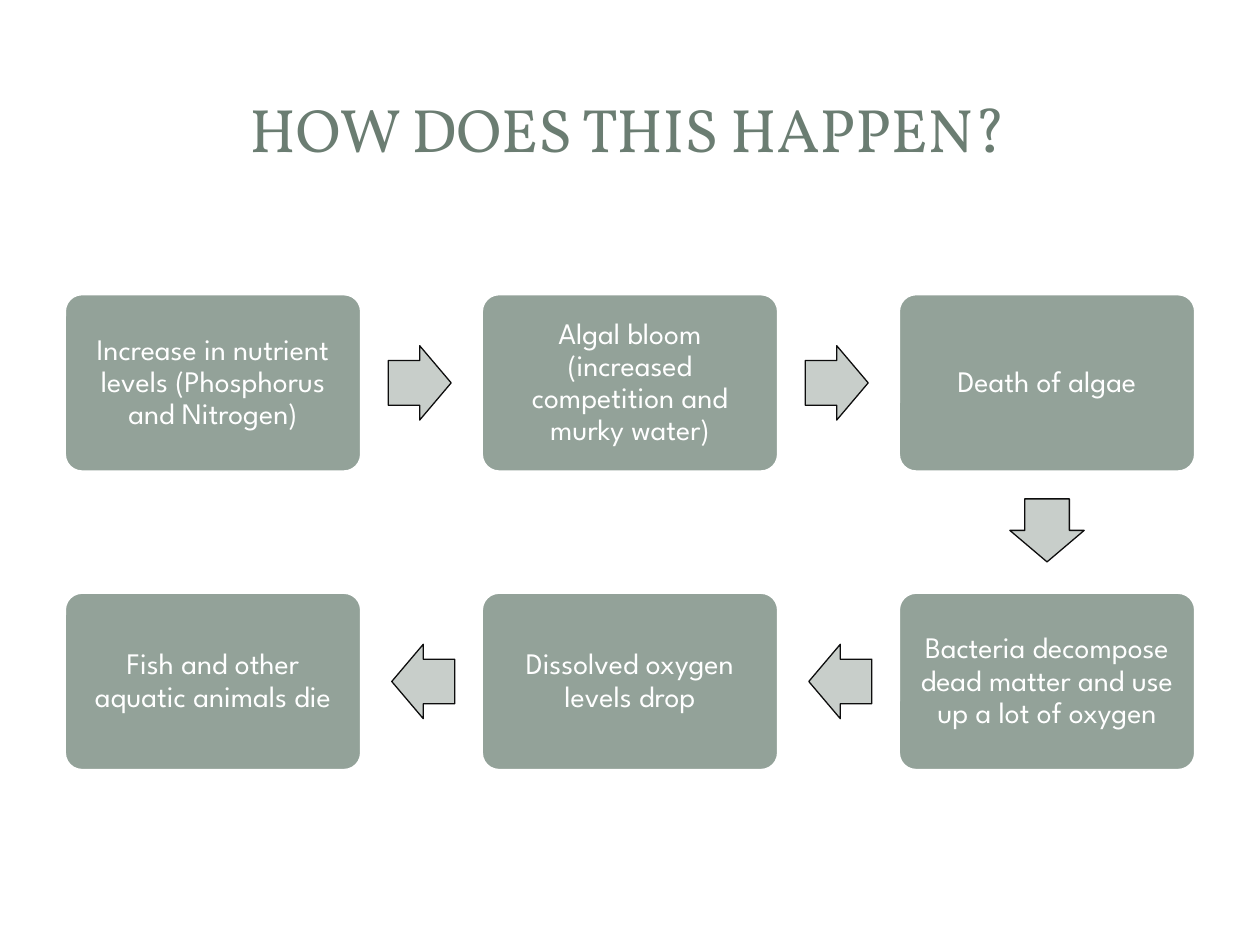
from pptx import Presentation
from pptx import util as u
from pptx.dml.color import RGBColor
from pptx.enum import shapes, text

STEPS = [
    "Increase in nutrient levels (Phosphorus and Nitrogen)",
    "Algal bloom (increased competition and murky water)",
    "Death of algae",
    "Bacteria decompose dead matter and use up a lot of oxygen",
    "Dissolved oxygen levels drop",
    "Fish and other aquatic animals die",
]
# Column and row of each step: right along the top, then back along the bottom
CELLS = [(0, 0), (1, 0), (2, 0), (2, 1), (1, 1), (0, 1)]

LEFT, TOP = 36.7, 167.8
COL_STEP, ROW_STEP = 238.3, 170.6
BOX_W, BOX_H = 170, 102
ARROW_W, ARROW_H = 36, 42.5


def color(value):
    return RGBColor.from_string(value)


def write(tf, content, font, size, ink, spacing=1.0, inset=5):
    tf.word_wrap = True
    tf.auto_size = text.MSO_AUTO_SIZE.NONE
    tf.vertical_anchor = text.MSO_ANCHOR.MIDDLE
    tf.margin_left = tf.margin_right = u.Pt(inset)
    tf.margin_top = tf.margin_bottom = u.Pt(inset)
    p = tf.paragraphs[0]
    p.alignment = text.PP_ALIGN.CENTER
    p.line_spacing = spacing
    r = p.add_run()
    r.text = content
    r.font.name = font
    r.font.size = u.Pt(size)
    r.font.color.rgb = color(ink)


class FlowSlide:
    heading_font, body_font = "Vollkorn", "League Spartan"
    heading, box_fill, arrow_fill = "6B7D72", "93A299", "C8CECA"
    white, outline = "FFFFFF", "0D0D0D"

    def __init__(self, prs):
        self.s = prs.slides.add_slide(prs.slide_layouts[5])

    def title(self, content, x, y, w, h):
        sp = self.s.shapes.title
        sp.left, sp.top, sp.width, sp.height = map(u.Pt, (x, y, w, h))
        write(sp.text_frame, content, self.heading_font, 35, self.heading)

    def shape(self, kind, cx, cy, w, h, fill, line, weight, adjustments):
        """Add a preset shape centred on (cx, cy)."""
        sp = self.s.shapes.add_shape(
            kind, u.Pt(cx - w / 2), u.Pt(cy - h / 2), u.Pt(w), u.Pt(h))
        sp.shadow.inherit = False
        sp.fill.solid()
        sp.fill.fore_color.rgb = color(fill)
        sp.line.color.rgb = color(line)
        sp.line.width = u.Pt(weight)
        for i, value in enumerate(adjustments):
            sp.adjustments[i] = value
        return sp

    def box(self, content, cx, cy):
        sp = self.shape(shapes.MSO_SHAPE.ROUNDED_RECTANGLE, cx, cy, BOX_W, BOX_H,
                        self.box_fill, self.white, 2, [0.1])
        write(sp.text_frame, content, self.body_font, 17, self.white, spacing=0.9)

    def arrow(self, cx, cy, angle):
        sp = self.shape(shapes.MSO_SHAPE.RIGHT_ARROW, cx, cy, ARROW_W, ARROW_H,
                        self.arrow_fill, self.outline, 0.75, [0.6, 0.5])
        sp.rotation = angle


def main():
    prs = Presentation()
    prs.slide_width, prs.slide_height = u.Pt(720), u.Pt(540)
    slide = FlowSlide(prs)
    slide.title("HOW DOES THIS HAPPEN?", 33.8, 32.4, 650.2, 82)

    # Step boxes
    centers = [(LEFT + BOX_W / 2 + col * COL_STEP, TOP + BOX_H / 2 + row * ROW_STEP)
               for col, row in CELLS]
    for content, (cx, cy) in zip(STEPS, centers):
        slide.box(content, cx, cy)

    # Arrows between neighbours, one point nearer the box they leave
    for (x1, y1), (x2, y2) in zip(centers, centers[1:]):
        dx, dy = (x2 > x1) - (x2 < x1), (y2 > y1) - (y2 < y1)
        angle = 90 if dy else 0 if dx > 0 else 180
        slide.arrow((x1 + x2) / 2 - dx, (y1 + y2) / 2 - dy, angle)

    prs.save("out.pptx")


if __name__ == "__main__":
    main()
